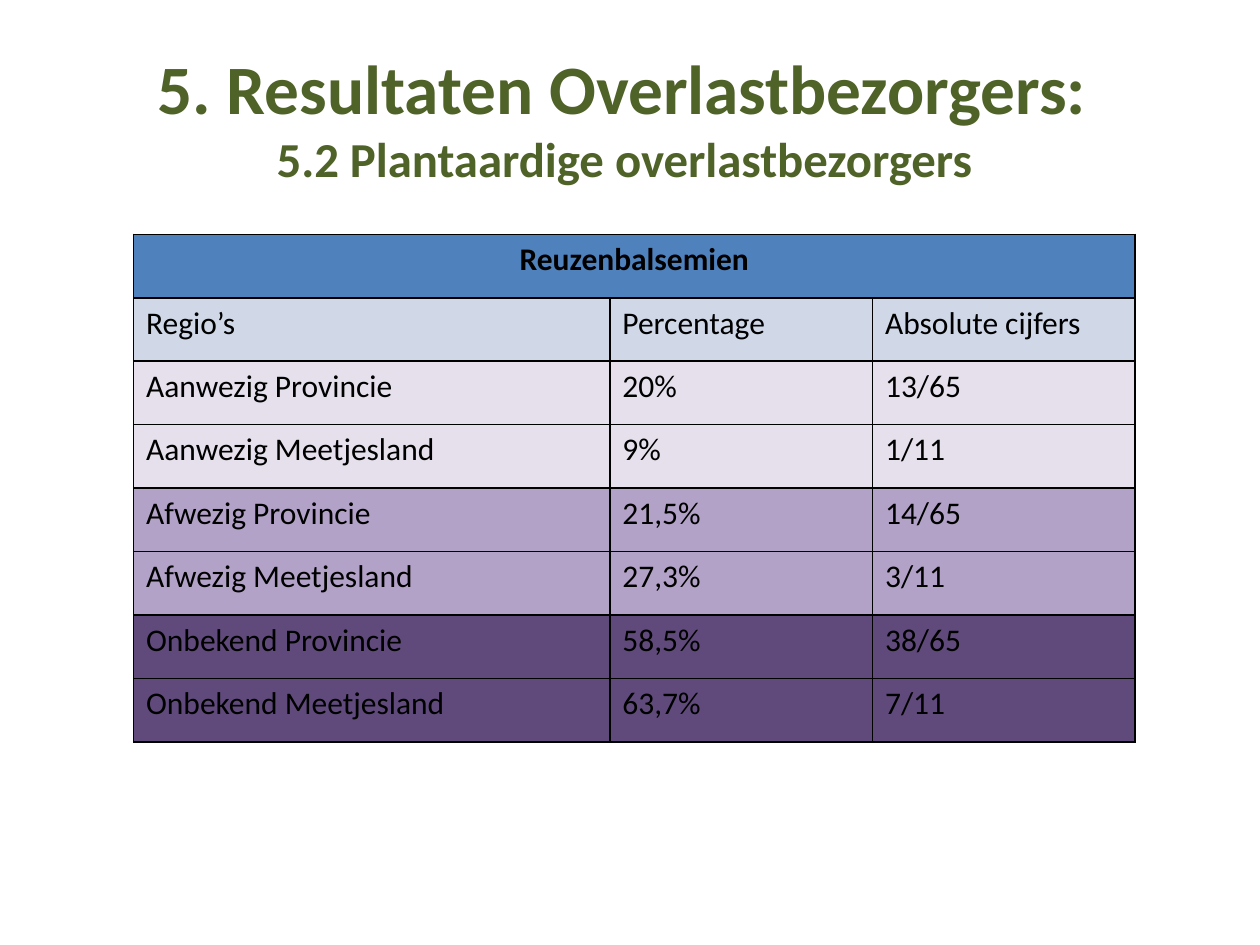
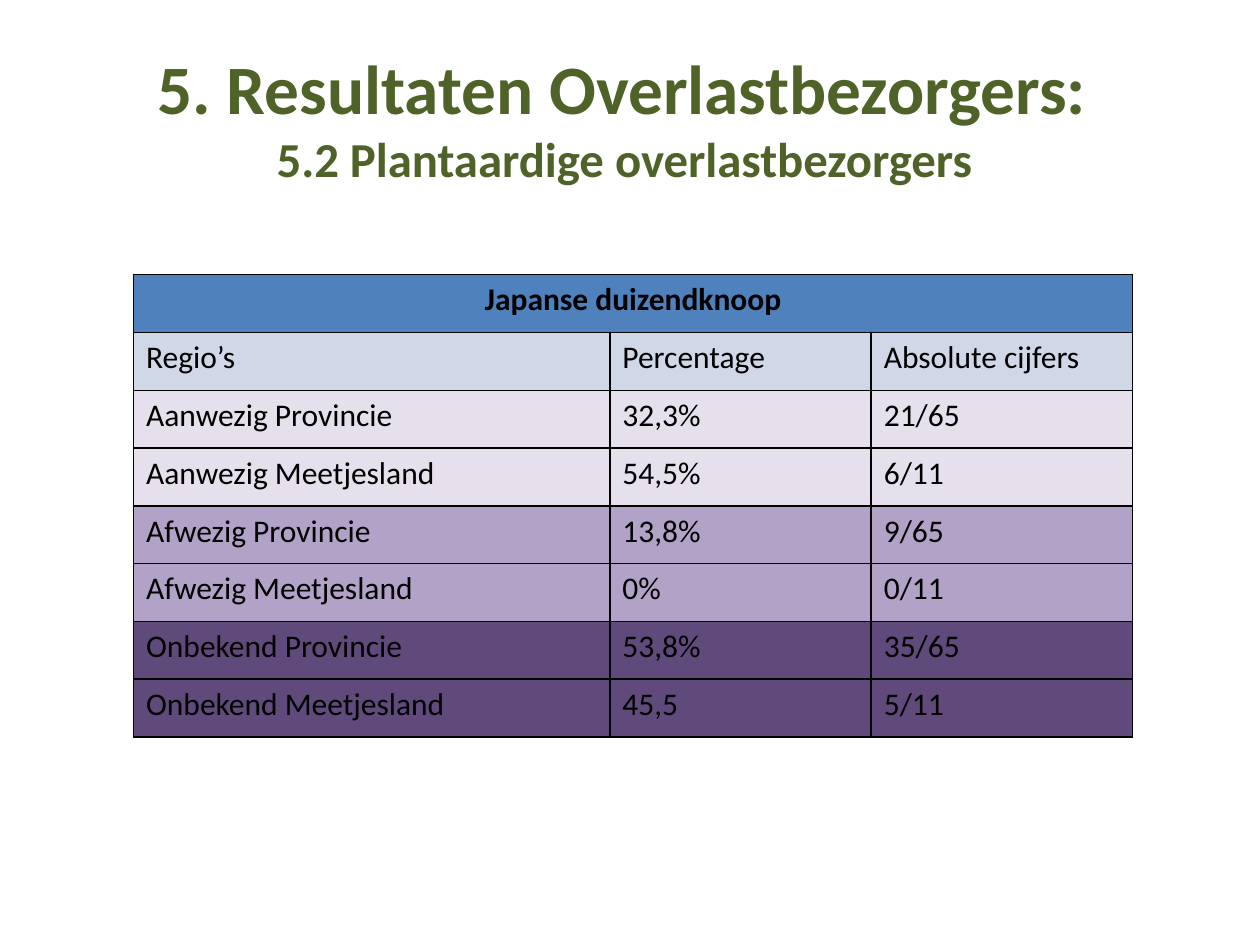
"""Build two slides with tables on plant nuisance species."""
from lxml import etree
from pptx import Presentation
from pptx.dml.color import RGBColor
from pptx.enum import text as t
from pptx.oxml import ns
from pptx.util import Pt

HUES = {
    "title": "4F6228", "text": "000000", "line": "000000",
    "head": "4F81BD", "labels": "D0D8E8",
    "present": "E6E0EC", "absent": "B3A2C7", "unknown": "604A7B",
}
FONT = "Calibri"
BANDS = ["head", "labels"] + [
    band for band in ("present", "absent", "unknown") for _ in range(2)]
LABELS = ("Regio’s", "Percentage", "Absolute cijfers")
REGIONS = [f"{state} {area}" for state in ("Aanwezig", "Afwezig", "Onbekend")
           for area in ("Provincie", "Meetjesland")]
TITLE = (("5. Resultaten Overlastbezorgers: ", 39.6),
         ("5.2 Plantaardige overlastbezorgers ", 27.9))
LEFT, FIRST = 76.32, 272.16
SLIDES = [
    {"name": "Reuzenbalsemien", "top": 133.92, "col": 150.12, "row": 36.27,
     "shares": ("20%", "9%", "21,5%", "27,3%", "58,5%", "63,7%"),
     "counts": ("13/65", "1/11", "14/65", "3/11", "38/65", "7/11")},
    {"name": "Japanse duizendknoop", "top": 156.96, "col": 149.4, "row": 33.03,
     "shares": ("32,3%", "54,5%", "13,8%", "0%", "53,8%", "45,5"),
     "counts": ("21/65", "6/11", "9/65", "0/11", "35/65", "5/11")},
]


def put(item, values):
    """Set the attributes of an item from a dict."""
    for key, value in values.items():
        setattr(item, key, value)


def style(font, size, hue, bold):
    """Format a font."""
    put(font, {"name": FONT, "size": Pt(size), "bold": bold})
    font.color.rgb = RGBColor.from_string(HUES[hue])


def add_title(slide):
    """Fill the title placeholder with its two lines."""
    box = slide.shapes.title
    put(box, {"left": Pt(36), "top": Pt(21.6),
              "width": Pt(648), "height": Pt(90)})
    frame = box.text_frame
    put(frame, {"auto_size": t.MSO_AUTO_SIZE.NONE, "word_wrap": True,
                "vertical_anchor": t.MSO_ANCHOR.MIDDLE})
    para = frame.paragraphs[0]
    para.alignment = t.PP_ALIGN.CENTER
    for pos, (words, size) in enumerate(TITLE):
        if pos:
            para.add_line_break()
        run = para.add_run()
        run.text = words
        style(run.font, size, "title", True)


def add_edges(cell):
    """Draw a thin line on all four sides of a cell."""
    props = cell._tc.get_or_add_tcPr()
    for side in ("lnL", "lnR", "lnT", "lnB"):
        line = etree.SubElement(props, ns.qn(f"a:{side}"), w=str(Pt(1)))
        fill = etree.SubElement(line, ns.qn("a:solidFill"))
        etree.SubElement(fill, ns.qn("a:srgbClr"), val=HUES["line"])


def fill_cell(cell, words, band):
    """Write, border and colour one cell."""
    add_edges(cell)
    cell.fill.solid()
    cell.fill.fore_color.rgb = RGBColor.from_string(HUES[band])
    para = cell.text_frame.paragraphs[0]
    head = band == "head"
    para.alignment = t.PP_ALIGN.CENTER if head else t.PP_ALIGN.LEFT
    if words:
        run = para.add_run()
        run.text = words
        style(run.font, 18, "text", head)


def add_table(slide, data):
    """Add the table of one species."""
    rows = [(data["name"], "", ""), LABELS,
            *zip(REGIONS, data["shares"], data["counts"])]
    widths = (FIRST, data["col"], data["col"])
    table = slide.shapes.add_table(
        len(rows), len(widths), Pt(LEFT), Pt(data["top"]),
        Pt(sum(widths)), Pt(data["row"] * len(rows))).table
    for col, width in zip(table.columns, widths):
        col.width = Pt(width)
    for y, (row, band) in enumerate(zip(rows, BANDS)):
        for x, words in enumerate(row):
            fill_cell(table.cell(y, x), words, band)
    table.cell(0, 0).merge(table.cell(0, len(widths) - 1))


def main():
    """Build and save the slides."""
    deck = Presentation()
    put(deck, {"slide_width": Pt(720), "slide_height": Pt(540)})
    for data in SLIDES:
        slide = deck.slides.add_slide(deck.slide_layouts[5])
        add_title(slide)
        add_table(slide, data)
    deck.save("out.pptx")


if __name__ == "__main__":
    main()
